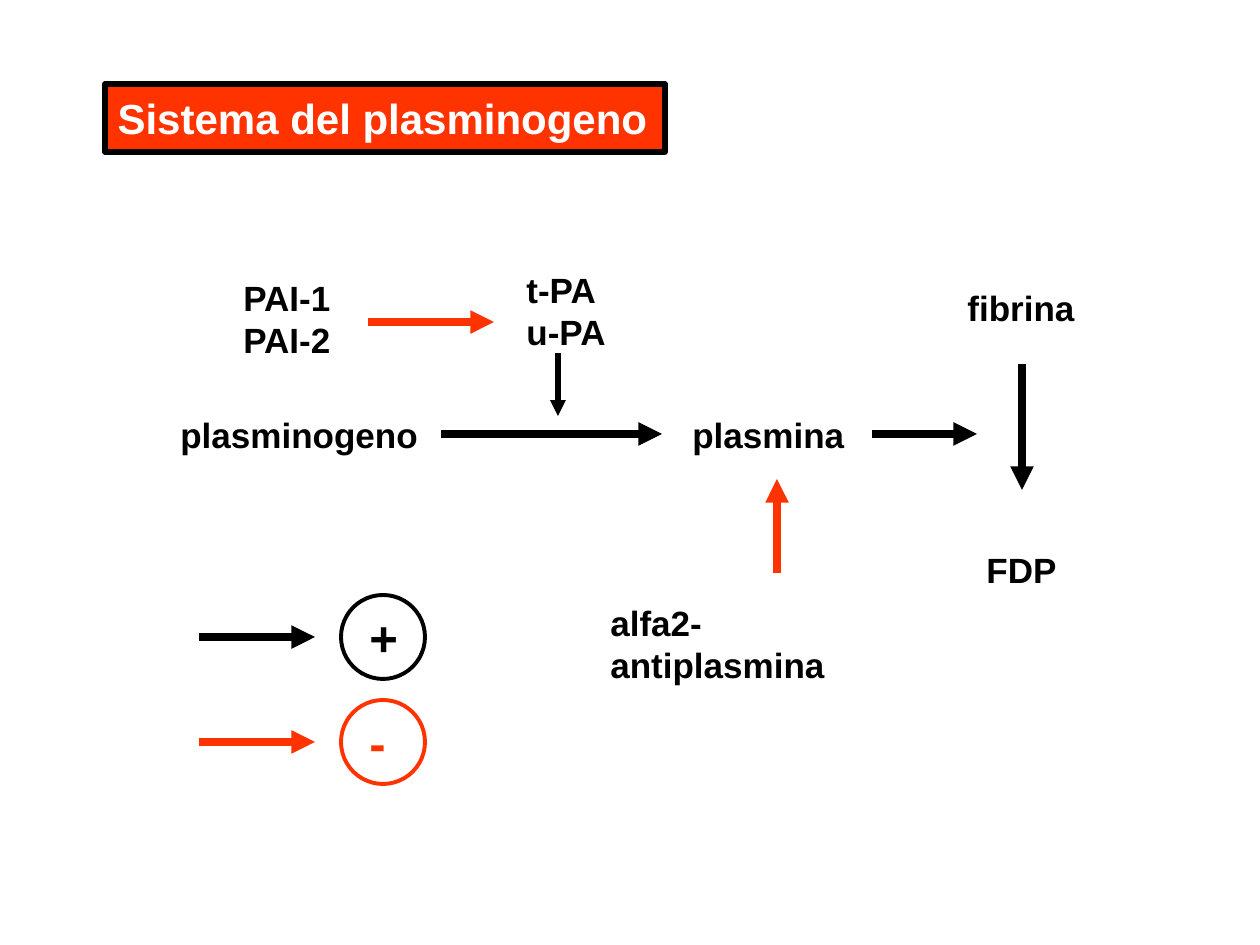
from dataclasses import dataclass

from lxml.etree import SubElement
from pptx import Presentation
from pptx.dml.color import RGBColor
from pptx.enum.shapes import MSO_CONNECTOR, MSO_SHAPE
from pptx.enum.text import MSO_ANCHOR, MSO_AUTO_SIZE, PP_ALIGN
from pptx.oxml.ns import qn
from pptx.util import Emu, Inches, Pt

PX_PER_INCH = 126


@dataclass(frozen=True)
class Theme:
    font: str = "Arial"
    black: RGBColor = RGBColor(0x00, 0x00, 0x00)
    white: RGBColor = RGBColor(0xFF, 0xFF, 0xFF)
    red: RGBColor = RGBColor(0xFF, 0x33, 0x00)
    title_size: int = 24
    label_size: int = 20
    sign_size: int = 28
    arrow_width: float = 4.5
    thin_width: float = 3
    ring_width: float = 2.25


THEME = Theme()


def px(*values):
    return [Emu(round(v * Inches(1) / PX_PER_INCH)) for v in values]


def write(tf, lines, size, color, wrap=False):
    tf.word_wrap = wrap
    tf.auto_size = MSO_AUTO_SIZE.NONE
    for i, line in enumerate(lines):
        p = tf.paragraphs[0] if i == 0 else tf.add_paragraph()
        p.alignment = PP_ALIGN.LEFT
        r = p.add_run()
        r.text = line
        r.font.name = THEME.font
        r.font.size = Pt(size)
        r.font.bold = True
        r.font.color.rgb = color


def add_title(s, text, x, y, w, h):
    sp = s.shapes.title
    sp.left, sp.top, sp.width, sp.height = px(x, y, w, h)
    sp.fill.solid()
    sp.fill.fore_color.rgb = THEME.red
    sp.line.color.rgb = THEME.black
    sp.line.width = Pt(THEME.thin_width)
    sp.text_frame.vertical_anchor = MSO_ANCHOR.MIDDLE
    write(sp.text_frame, [text], THEME.title_size, THEME.white)


def add_label(shapes, lines, x, y, w, h, size=THEME.label_size,
              color=THEME.black, wrap=False):
    sp = shapes.add_textbox(*px(x, y, w, h))
    write(sp.text_frame, lines, size, color, wrap)


def add_arrow(shapes, x1, y1, x2, y2, color=THEME.black, width=THEME.arrow_width):
    line = shapes.add_connector(MSO_CONNECTOR.STRAIGHT, *px(x1, y1, x2, y2))
    line.line.color.rgb = color
    line.line.width = Pt(width)
    SubElement(line.line._get_or_add_ln(), qn("a:tailEnd"), type="triangle")
    SubElement(line._element.spPr, qn("a:effectLst"))


def add_ring(shapes, x, y, diameter, color):
    sp = shapes.add_shape(MSO_SHAPE.OVAL, *px(x, y, diameter, diameter))
    sp.shadow.inherit = False
    sp.fill.background()
    sp.line.color.rgb = color
    sp.line.width = Pt(THEME.ring_width)


def add_legend(s):
    """Explain the arrow colours: activation and inhibition."""
    shapes = s.shapes.add_group_shape().shapes
    diameter = 84
    entries = [("+", 54, THEME.black), ("-", 42, THEME.red)]
    for i, (sign, width, color) in enumerate(entries):
        middle = 637 + 105 * i
        add_arrow(shapes, 199, middle, 315, middle, color)
        add_label(shapes, [sign], 357, middle - 36, width, 72, THEME.sign_size, color)
        add_ring(shapes, 341, middle - diameter // 2, diameter, color)


def main():
    prs = Presentation()
    prs.slide_width, prs.slide_height = Inches(10), Inches(7.5)
    s = prs.slides.add_slide(prs.slide_layouts[5])

    add_title(s, "Sistema del plasminogeno", 105, 84, 560, 68)

    one_line, two_lines = 54, 97
    for lines, x, y, w in [
        (["plasminogeno"], 168, 407, 263),
        (["plasmina"], 680, 407, 176),
        (["fibrina"], 955, 280, 132),
        (["FDP"], 974, 542, 96),
        (["t-PA", "u-PA"], 514, 262, 107),
        (["PAI-1", "PAI-2"], 231, 270, 115),
    ]:
        add_label(s.shapes, lines, x, y, w, one_line if len(lines) == 1 else two_lines)
    add_label(s.shapes, ["alfa2-antiplasmina"], 598, 595, 315, two_lines, wrap=True)

    reaction_y = 434
    add_arrow(s.shapes, 441, reaction_y, 662, reaction_y)
    add_arrow(s.shapes, 872, reaction_y, 977, reaction_y)
    add_arrow(s.shapes, 558, 353, 558, 416, width=THEME.thin_width)
    add_arrow(s.shapes, 1022, 364, 1022, 490)
    add_arrow(s.shapes, 368, 322, 494, 322, THEME.red)
    add_arrow(s.shapes, 777, 573, 777, 479, THEME.red)

    add_legend(s)
    prs.save("out.pptx")


if __name__ == "__main__":
    main()
